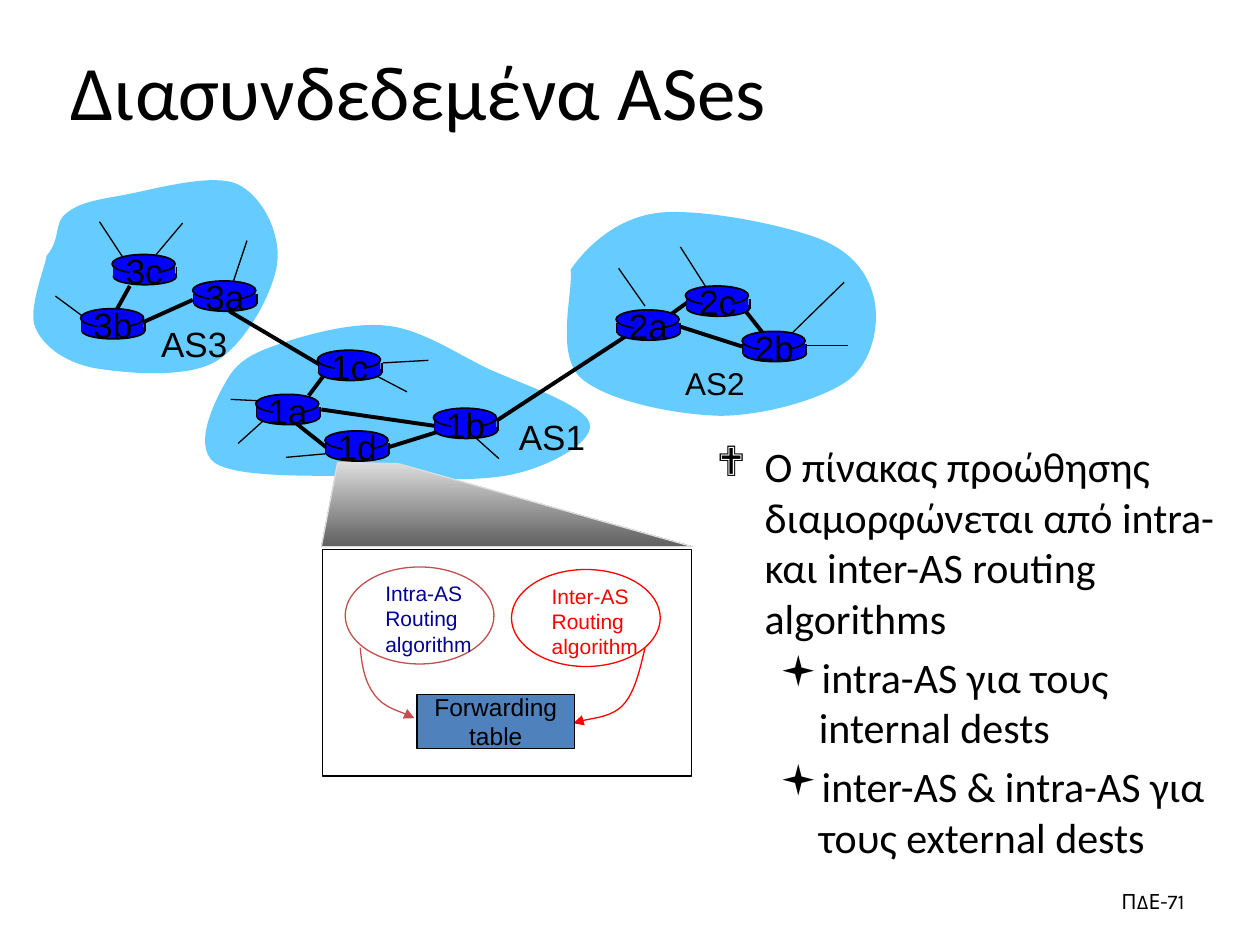
import pptx
import pptx.dml.color
import pptx.enum.shapes
import pptx.enum.text
import pptx.oxml.ns
import pptx.util
from dataclasses import dataclass
from lxml import etree

Inches = pptx.util.Inches
Pt = pptx.util.Pt
RGB = pptx.dml.color.RGBColor.from_string
qn = pptx.oxml.ns.qn
SHAPE = pptx.enum.shapes.MSO_SHAPE
STRAIGHT = pptx.enum.shapes.MSO_CONNECTOR.STRAIGHT
ALIGN = pptx.enum.text.PP_ALIGN
MIDDLE = pptx.enum.text.MSO_ANCHOR.MIDDLE


@dataclass(frozen=True)
class Theme:
    ink: str = "000000"
    cloud: str = "66CCFF"
    router: str = "0000FF"
    intra: str = "000099"
    intra_line: str = "C0504D"
    inter: str = "FF0000"
    table: str = "4F81BD"
    beam_light: str = "DDDDDD"
    beam_dark: str = "5F5F5F"
    title: int = 44
    body: int = 24
    label: int = 20
    label_small: int = 18
    forwarding: int = 14
    small: int = 12


theme = Theme()


def paint(shape, fill=None, line=None, width=0.75):
    """Fill and outline a shape, and take its shadow away; None means no paint."""
    if line:
        shape.line.color.rgb = RGB(line)
        shape.line.width = Pt(width)
    else:
        shape.line.fill.background()
    if shape.shape_type == pptx.enum.shapes.MSO_SHAPE_TYPE.LINE:
        etree.SubElement(shape._element.spPr, qn("a:effectLst"))
        return
    shape.shadow.inherit = False
    if fill:
        shape.fill.solid()
        shape.fill.fore_color.rgb = RGB(fill)
    else:
        shape.fill.background()


def write(frame, lines, size, color=theme.ink, font="Arial", align=ALIGN.LEFT, wrap=False):
    """Write one paragraph per line; a line is a list of runs."""
    frame.word_wrap = wrap
    for number, line in enumerate(lines):
        paragraph = frame.paragraphs[0] if number == 0 else frame.add_paragraph()
        paragraph.alignment = align
        for words in line:
            run = paragraph.add_run()
            run.text = words
            run.font.name = font
            run.font.size = Pt(size)
            run.font.color.rgb = RGB(color)


deck = pptx.Presentation()
deck.slide_width, deck.slide_height = Inches(10), Inches(7.5)
slide = deck.slides.add_slide(deck.slide_layouts[5])
shapes = slide.shapes

title = shapes.title
title.left, title.top, title.width, title.height = map(Inches, (0.46, 0.25, 8.5, 0.92))
title.text_frame.vertical_anchor = MIDDLE
write(title.text_frame, [["Διασυνδεδεμένα ASes"]], theme.title, font="Calibri", wrap=True)

# Clouds and curved arrows: start point, then cubic segments; a cloud has a fill
curves = [
    (theme.cloud, None, [(4.53, 2.14),
     (4.66, 1.95), (4.9, 1.73), (5.22, 1.69), (5.55, 1.65), (6.2, 1.78), (6.49, 1.89),
     (6.78, 2), (6.9, 2.19), (6.94, 2.38), (6.98, 2.57), (6.93, 2.87), (6.73, 3.02),
     (6.52, 3.17), (6.06, 3.3), (5.71, 3.3), (5.35, 3.29), (4.8, 3.18), (4.6, 2.99),
     (4.41, 2.79), (4.55, 2.32), (4.53, 2.14)]),
    (theme.cloud, None, [(0.37, 2.03),
     (0.49, 1.89), (0.42, 1.77), (0.53, 1.69), (0.63, 1.61), (0.75, 1.59), (0.97, 1.55),
     (1.2, 1.51), (1.67, 1.37), (1.88, 1.46), (2.08, 1.55), (2.23, 1.85), (2.2, 2.09),
     (2.17, 2.32), (1.95, 2.73), (1.71, 2.87), (1.47, 3.01), (0.97, 2.96), (0.74, 2.92),
     (0.5, 2.87), (0.34, 2.74), (0.28, 2.6), (0.22, 2.45), (0.35, 2.15), (0.37, 2.03)]),
    (theme.cloud, None, [(1.83, 2.97),
     (1.94, 2.81), (2.13, 2.76), (2.34, 2.69), (2.55, 2.63), (2.85, 2.55), (3.11, 2.59),
     (3.36, 2.63), (3.6, 2.79), (3.86, 2.92), (4.12, 3.04), (4.64, 3.21), (4.68, 3.36),
     (4.72, 3.5), (4.39, 3.69), (4.09, 3.76), (3.8, 3.83), (3.31, 3.8), (2.91, 3.78),
     (2.52, 3.77), (1.88, 3.8), (1.7, 3.67), (1.52, 3.53), (1.72, 3.14), (1.83, 2.97)]),
    (None, theme.intra_line, [(2.86, 5.14),
     (2.87, 5.28), (2.9, 5.42), (2.97, 5.51), (3.04, 5.61), (3.24, 5.67), (3.29, 5.7)]),
    (None, theme.inter, [(5.12, 5.14),
     (5.08, 5.31), (5.04, 5.49), (4.95, 5.59), (4.86, 5.69), (4.62, 5.71), (4.55, 5.74)]),
]
for fill, line, points in curves:
    builder = shapes.build_freeform(*map(Inches, points[0]))
    builder.add_line_segments([(Inches(x), Inches(y)) for x, y in points[1:]],
                              close=fill is not None)
    curve = builder.convert_to_shape()
    # Every three straight segments become one cubic segment
    segments = list(curve._element.iter(qn("a:lnTo")))
    for first, second, third in zip(segments[::3], segments[1::3], segments[2::3]):
        cubic = etree.Element(qn("a:cubicBezTo"))
        first.addprevious(cubic)
        for segment in (first, second, third):
            cubic.append(segment[0])
            segment.getparent().remove(segment)
    paint(curve, fill, line)
    if line:
        stroke = curve._element.spPr.find(qn("a:ln"))
        etree.SubElement(stroke, qn("a:tailEnd"), type="triangle")

# Links between routers, then the stubs that leave them
links = [
    (5.39, 2.59, 5.89, 2.75), (5.91, 2.46, 6.06, 2.65), (5.29, 2.52, 5.47, 2.39),
    (3.08, 3.55, 3.5, 3.42), (2.35, 3.36, 2.59, 3.55), (2.55, 3.25, 3.45, 3.38),
    (2.45, 3.14, 2.57, 2.98), (1.13, 2.56, 1.53, 2.38), (1.82, 2.47, 2.53, 2.89),
    (3.94, 3.34, 4.98, 2.66), (1.03, 2.27, 0.93, 2.45),
]
stubs = [
    (0.44, 2.35, 0.67, 2.52), (1.45, 1.77, 1.24, 2.02), (0.79, 1.76, 0.98, 2.05),
    (1.96, 1.91, 1.85, 2.24), (6.38, 2.74, 6.73, 2.74), (6.28, 2.65, 6.7, 2.24),
    (5.61, 2.29, 5.4, 1.96), (5.12, 2.43, 4.91, 2.13), (2.1, 3.33, 1.89, 3.52),
    (2.04, 3.18, 1.83, 3.17), (2.6, 3.6, 2.27, 3.63), (3.04, 2.88, 3.4, 2.86),
    (3.77, 3.47, 3.96, 3.64), (3, 2.99, 3.23, 3.11),
]
for group, width in ((links, 2.25), (stubs, 0.75)):
    for ends in group:
        paint(shapes.add_connector(STRAIGHT, *map(Inches, ends)), line=theme.ink, width=width)

# Each router is a cylinder: base, sides, body, lid, and a patch behind its name
routers = [
    ("3b", 0.64, 2.45), ("1d", 2.58, 3.42), ("3a", 1.53, 2.23), ("1c", 2.52, 2.78),
    ("2a", 4.89, 2.46), ("1a", 2.03, 3.13), ("2c", 5.44, 2.27), ("2b", 5.89, 2.63),
    ("1b", 3.44, 3.24), ("3c", 0.89, 2.02),
]
for name, x, y in routers:
    base = shapes.add_shape(SHAPE.OVAL, *map(Inches, (x + 0.01, y + 0.11, 0.5, 0.13)))
    paint(base, theme.router, theme.ink, 1)
    for side_x in (x + 0.01, x + 0.51):
        side = shapes.add_connector(STRAIGHT, *map(Inches, (side_x, y + 0.1, side_x, y + 0.18)))
        paint(side, line=theme.ink, width=1)
    body = shapes.add_shape(SHAPE.RECTANGLE, *map(Inches, (x + 0.01, y + 0.1, 0.49, 0.08)))
    paint(body, theme.router)
    lid = shapes.add_shape(SHAPE.OVAL, *map(Inches, (x, y, 0.5, 0.15)))
    paint(lid, theme.router, theme.ink, 1)
    patch = shapes.add_shape(SHAPE.RECTANGLE, *map(Inches, (x + 0.14, y + 0.02, 0.23, 0.2)))
    paint(patch, theme.router)
    label = shapes.add_textbox(*map(Inches, (x, y - 0.09, 0.51, 0.43)))
    write(label.text_frame, [[name]], theme.label, align=ALIGN.CENTER)

for name, x, y, width, size in (("AS3", 1.18, 2.51, 0.73, theme.label),
                                ("AS1", 4.02, 3.25, 0.73, theme.label),
                                ("AS2", 5.34, 2.84, 0.67, theme.label_small)):
    label = shapes.add_textbox(*map(Inches, (x, y, width, 0.43)))
    write(label.text_frame, [[name]], size)

# Zoom into router 1d
builder = shapes.build_freeform(Inches(2.55), Inches(4.34))
builder.add_line_segments([(Inches(x), Inches(y))
                           for x, y in ((2.68, 3.67), (3.16, 3.68), (5.5, 4.34))])
beam = builder.convert_to_shape()
paint(beam, line=theme.beam_light)
beam.fill.gradient()
beam.fill.gradient_angle = 270
for stop, position, color in zip(beam.fill.gradient_stops, (0, 1),
                                 (theme.beam_light, theme.beam_dark)):
    stop.position = position
    stop.color.rgb = RGB(color)

paint(shapes.add_shape(SHAPE.RECTANGLE, *map(Inches, (2.56, 4.36, 2.93, 1.8))), line=theme.ink)
for kind, x, y, line, color in (("Intra-AS", 2.74, 4.5, theme.intra_line, theme.intra),
                                ("Inter-AS", 4.06, 4.52, theme.inter, theme.inter)):
    paint(shapes.add_shape(SHAPE.OVAL, *map(Inches, (x, y, 1.18, 0.77))), line=line)
    algorithm = shapes.add_textbox(*map(Inches, (x + 0.22, y + 0.06, 0.92, 0.7)))
    write(algorithm.text_frame, [[kind], ["Routing"], ["algorithm"]], theme.small, color)

forwarding = shapes.add_shape(SHAPE.RECTANGLE, *map(Inches, (3.31, 5.51, 1.25, 0.43)))
paint(forwarding, theme.table, theme.ink)
forwarding.text_frame.vertical_anchor = MIDDLE
write(forwarding.text_frame, [["Forwarding"], ["table"]], theme.forwarding, align=ALIGN.CENTER)

notes = shapes.add_textbox(*map(Inches, (5.59, 3.45, 4.17, 3.72)))
write(notes.text_frame, [
    ["Ο πίνακας προώθησης διαμορφώνεται από intra- και inter-AS routing algorithms"],
    ["intra-AS για τους internal dests"],
    ["inter-AS & intra-AS για τους external dests"],
], theme.body, font="Calibri", wrap=True)
bullets = (("❖", 0.38, 0.38, 0), ("▪", 0.81, 0.31, 1), ("▪", 0.81, 0.31, 1))
for paragraph, (mark, margin, hanging, level) in zip(notes.text_frame.paragraphs, bullets):
    paragraph.level = level
    paragraph.space_before = Pt(5)
    properties = paragraph._p.get_or_add_pPr()
    properties.set("marL", str(Inches(margin)))
    properties.set("indent", str(-Inches(hanging)))
    etree.SubElement(properties, qn("a:buFont"), typeface="Wingdings")
    etree.SubElement(properties, qn("a:buChar"), char=mark)

page = shapes.add_textbox(*map(Inches, (7.17, 6.95, 2.33, 0.4)))
page.text_frame.vertical_anchor = MIDDLE
write(page.text_frame, [["ΠΔΕ-", "71"]], theme.small, font="Karla", align=ALIGN.RIGHT, wrap=True)

deck.save("out.pptx")
